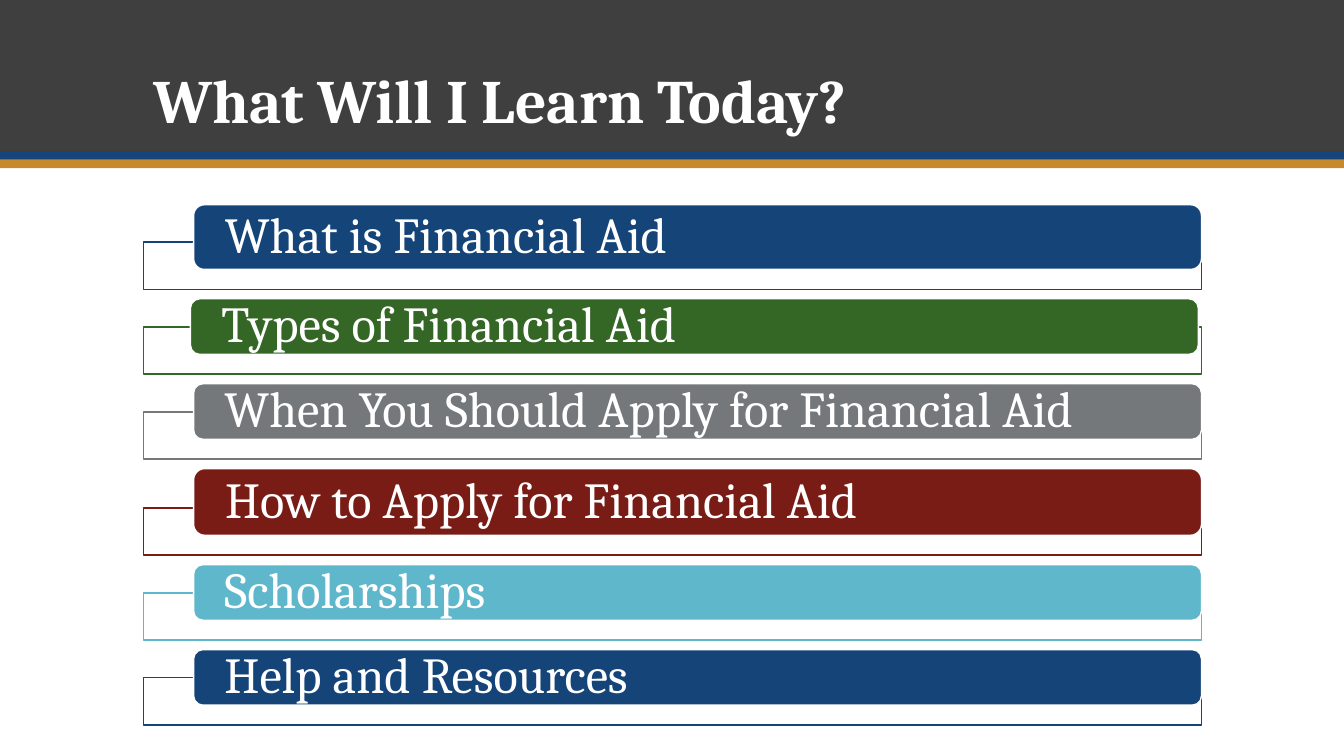
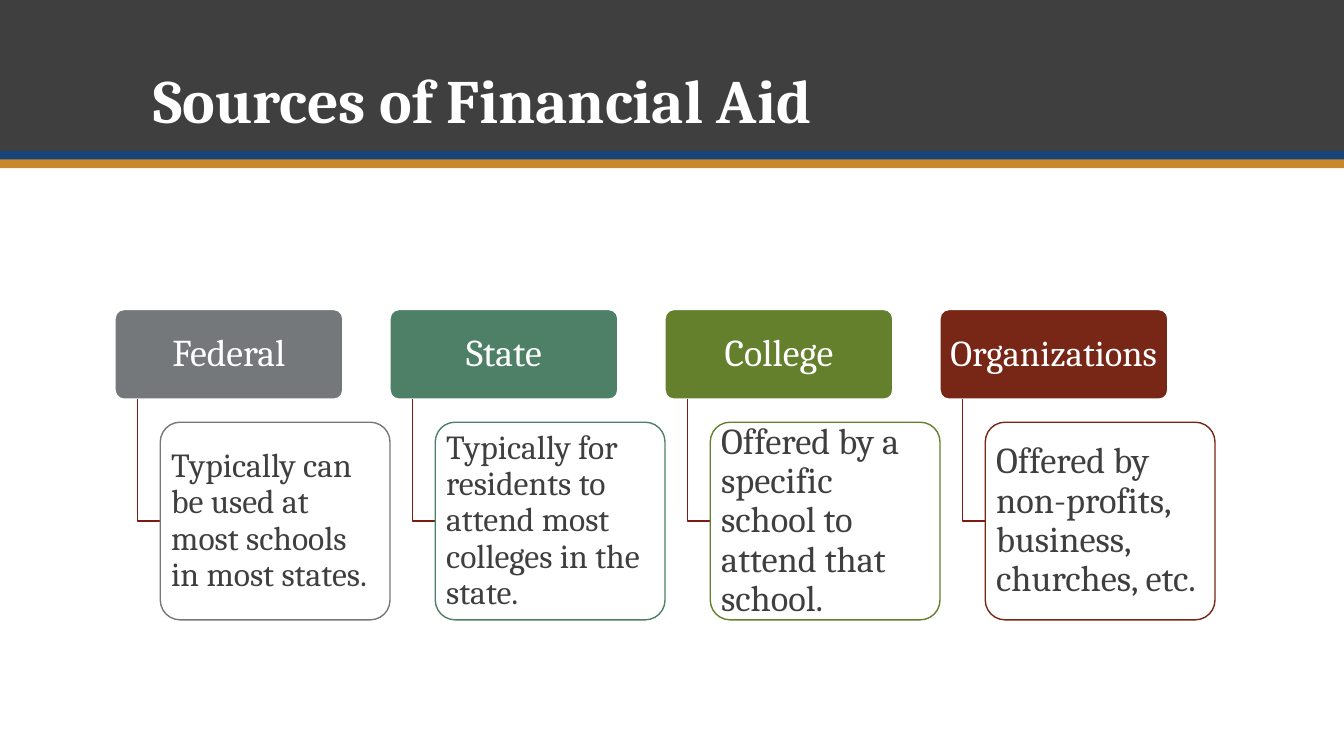
"""Build two financial aid slides: the agenda and the sources of aid."""
from pptx import Presentation
from pptx.dml.color import RGBColor
from pptx.enum.shapes import MSO_SHAPE as Preset
from pptx.enum.text import MSO_ANCHOR as Anchor, MSO_AUTO_SIZE as AutoSize, PP_ALIGN as Align
from pptx.util import Cm, Pt

FONT = "Cambria"
WHITE = RGBColor(0xFF, 0xFF, 0xFF)
CHARCOAL = RGBColor(0x3F, 0x3F, 0x3F)
BAND_BLUE = RGBColor(0x17, 0x44, 0x79)
GOLD = RGBColor(0xC6, 0x89, 0x2B)
NAVY = RGBColor(0x15, 0x44, 0x79)
FOREST = RGBColor(0x34, 0x66, 0x25)
GRAY = RGBColor(0x75, 0x78, 0x7B)
MAROON = RGBColor(0x7A, 0x1C, 0x16)
SKY = RGBColor(0x5F, 0xB7, 0xCB)
TEAL = RGBColor(0x4D, 0x80, 0x66)
OLIVE = RGBColor(0x64, 0x80, 0x2D)
RUST = RGBColor(0x78, 0x26, 0x15)


def add_box(slide, preset, left, top, width, height, fill, line=None, corner=None):
    """Add a filled shape measured in centimetres."""
    box = slide.shapes.add_shape(preset, Cm(left), Cm(top), Cm(width), Cm(height))
    box.shadow.inherit = False
    box.fill.solid()
    box.fill.fore_color.rgb = fill
    if line is None:
        box.line.fill.background()
    else:
        box.line.color.rgb = line
        box.line.width = Pt(1)
    if corner is not None:
        box.adjustments[0] = corner
    return box


def write(shape, text, size, color, side, edge, align=Align.LEFT, anchor=Anchor.MIDDLE, bold=False):
    """Put one styled paragraph into a shape, with side and edge insets in centimetres."""
    frame = shape.text_frame
    frame.text = text
    frame.word_wrap = True
    frame.auto_size = AutoSize.NONE
    frame.vertical_anchor = anchor
    frame.margin_left = frame.margin_right = Cm(side)
    frame.margin_top = frame.margin_bottom = Cm(edge)
    paragraph = frame.paragraphs[0]
    paragraph.alignment = align
    paragraph.line_spacing = 0.9
    font = paragraph.runs[0].font
    font.name, font.size, font.bold = FONT, Pt(size), bold
    font.color.rgb = color


deck = Presentation()
deck.slide_width, deck.slide_height = Cm(33.87), Cm(19.05)
layout = deck.slide_layouts[5]
for placeholder in list(layout.placeholders):
    if placeholder.placeholder_format.idx == 0:
        placeholder.left, placeholder.top = Cm(3.61), Cm(0.71)
        placeholder.width, placeholder.height = Cm(26.67), Cm(2.87)
    else:
        layout.shapes.element.remove(placeholder.element)

agenda = deck.slides.add_slide(layout)
sources = deck.slides.add_slide(layout)

bands = [
    add_box(agenda, Preset.RECTANGLE, 0, top, 33.87, height, color)
    for top, height, color in [(0, 3.81, CHARCOAL), (3.81, 0.22, BAND_BLUE), (4.02, 0.22, GOLD)]
]
for position, band in enumerate(bands, start=2):
    layout.shapes.element.insert(position, band.element)

for slide, heading in [(agenda, "What Will I Learn Today?"), (sources, "Sources of Financial Aid")]:
    write(slide.shapes.title, heading, 44, WHITE, 0.25, 0.13, anchor=Anchor.BOTTOM, bold=True)

TOPICS = [
    ("What is Financial Aid", NAVY, 4.88, 1.63),
    ("Types of Financial Aid", FOREST, 4.8, 1.4),
    ("When You Should Apply for Financial Aid", GRAY, 4.88, 1.4),
    ("How to Apply for Financial Aid", MAROON, 4.88, 1.68),
    ("Scholarships", SKY, 4.88, 1.4),
    ("Help and Resources", NAVY, 4.88, 1.4),
]
topic_top = 5.16
for topic, color, left, height in TOPICS:
    add_box(agenda, Preset.RECTANGLE, 3.61, topic_top + height - 0.69, 26.67, 1.19, WHITE, color)
    bar = add_box(agenda, Preset.ROUNDED_RECTANGLE, left, topic_top, 25.4, height, color, WHITE, 0.167)
    write(bar, topic, 36, WHITE, 0.71, 0)
    topic_top += height + 0.74

SOURCES = [
    ("Federal", 27, GRAY, "Typically can be used at most schools in most states.", 24),
    ("State", 27, TEAL, "Typically for residents to attend most colleges in the state.", 24),
    ("College", 27, OLIVE, "Offered by a specific school to attend that school.", 26),
    ("Organizations", 26, RUST, "Offered by non-profits, business, churches, etc.", 26),
]
HEAD_TOP, HEAD_HEIGHT = 7.8, 2.26
DETAIL_TOP, DETAIL_HEIGHT = 10.64, 4.98
head_bottom = Cm(HEAD_TOP + HEAD_HEIGHT)
detail_middle = Cm(DETAIL_TOP + DETAIL_HEIGHT / 2)
for column, (source, source_size, color, detail, detail_size) in enumerate(SOURCES):
    left = 2.9 + column * 6.93
    detail_left = left + 1.14
    stem = Cm(left + 0.57)

    head = add_box(sources, Preset.ROUNDED_RECTANGLE, left, HEAD_TOP, 5.74, HEAD_HEIGHT, color, WHITE, 0.1)
    write(head, source, source_size, WHITE, 0.15, 0.1, align=Align.CENTER)

    outline = sources.shapes.build_freeform(stem, head_bottom)
    outline.add_line_segments([(stem, detail_middle), (Cm(detail_left), detail_middle)], close=False)
    branch = outline.convert_to_shape()
    branch.shadow.inherit = False
    branch.fill.background()
    branch.line.color.rgb = MAROON
    branch.line.width = Pt(1)

    card = add_box(sources, Preset.ROUNDED_RECTANGLE, detail_left, DETAIL_TOP, 5.79, DETAIL_HEIGHT, WHITE, color, 0.1)
    write(card, detail, detail_size, CHARCOAL, 0.13, 0.09)

deck.save("out.pptx")
